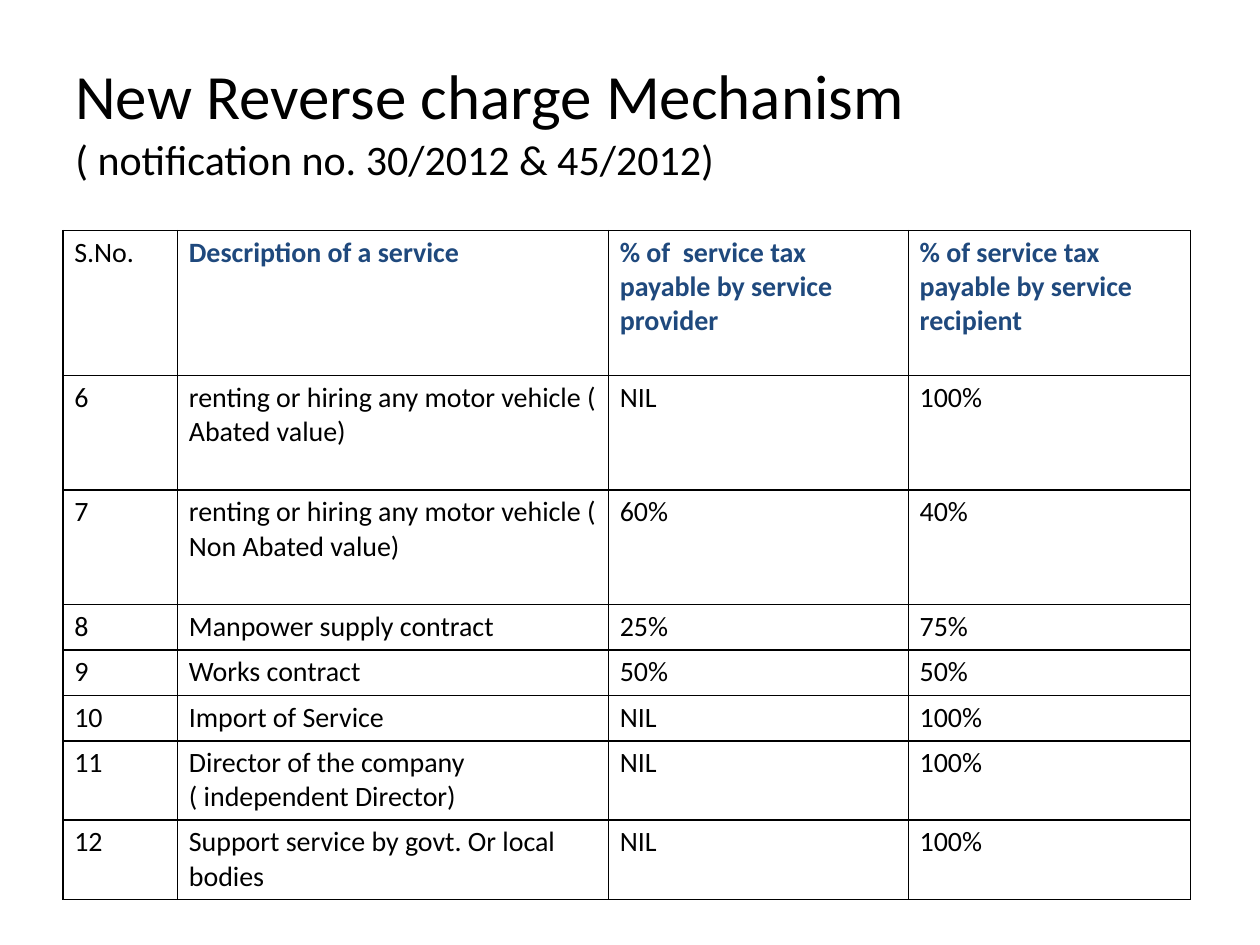
from lxml import etree
from pptx import Presentation
from pptx import util as u
from pptx.dml.color import RGBColor
from pptx.enum import text
from pptx.oxml.ns import qn

BLACK, BLUE = "000000", "1F497D"


def format_run(r, size, color=BLACK, bold=False):
    values = {"name": "Calibri", "size": u.Pt(size), "bold": bold}
    for name, value in values.items():
        setattr(r.font, name, value)
    r.font.color.rgb = RGBColor.from_string(color)


def add_borders(cell):
    """Draw a thin black line on all four sides; call before setting the fill."""
    tcPr = cell._tc.get_or_add_tcPr()
    for side in ("lnL", "lnR", "lnT", "lnB"):
        ln = etree.SubElement(tcPr, qn(f"a:{side}"), w=str(u.Pt(1)))
        fill = etree.SubElement(ln, qn("a:solidFill"))
        etree.SubElement(fill, qn("a:srgbClr"), val=BLACK)


prs = Presentation()
prs.slide_width, prs.slide_height = u.Inches(10), u.Inches(7.5)
s = prs.slides.add_slide(prs.slide_layouts[6])

# Title
sp = s.shapes.add_textbox(u.Inches(0.5), u.Inches(0.3), u.Inches(9), u.Inches(1.25))
tf = sp.text_frame
tf.word_wrap = True
tf.vertical_anchor = text.MSO_ANCHOR.MIDDLE
p = tf.paragraphs[0]
for words, size in (("New Reverse charge Mechanism", 36), (" ", 40),
                    ("( notification no. 30/2012 & 45/2012)", 24)):
    if size == 24:
        p.add_line_break()
    r = p.add_run()
    r.text = words
    format_run(r, size)

# Service tax table
rows = [
    ("S.No.", "Description of a service",
     "% of  service tax payable by service\nprovider",
     "% of service tax payable by service recipient"),
    ("6", "renting or hiring any motor vehicle ( Abated value)", "NIL", "100%"),
    ("7", "renting or hiring any motor vehicle ( Non Abated value)", "60%", "40%"),
    ("8", "Manpower supply contract", "25%", "75%"),
    ("9", "Works contract", "50%", "50%"),
    ("10", "Import of Service", "NIL", "100%"),
    ("11", "Director of the company\n( independent Director)", "NIL", "100%"),
    ("12", "Support service by govt. Or local bodies", "NIL", "100%"),
]
widths = [0.91, 3.42, 2.38, 2.24]
heights = [1.15, 0.91, 0.91, 0.36, 0.36, 0.36, 0.63, 0.63]
margins = {"margin_left": 0.09, "margin_right": 0.09,
           "margin_top": 0.04, "margin_bottom": 0.04}

table = s.shapes.add_table(len(rows), len(widths), u.Inches(0.5), u.Inches(1.83),
                           u.Inches(sum(widths)), u.Inches(sum(heights))).table
table.first_row = table.horz_banding = False
for column, width in zip(table.columns, widths):
    column.width = u.Inches(width)
for row, height in zip(table.rows, heights):
    row.height = u.Inches(height)

for i, row in enumerate(rows):
    for j, words in enumerate(row):
        cell = table.cell(i, j)
        add_borders(cell)
        cell.fill.background()
        for name, value in margins.items():
            setattr(cell, name, u.Inches(value))
        cell.text = words
        heading = i == 0 and j > 0
        for p in cell.text_frame.paragraphs:
            for r in p.runs:
                format_run(r, 16, BLUE if heading else BLACK, heading)

prs.save("out.pptx")
